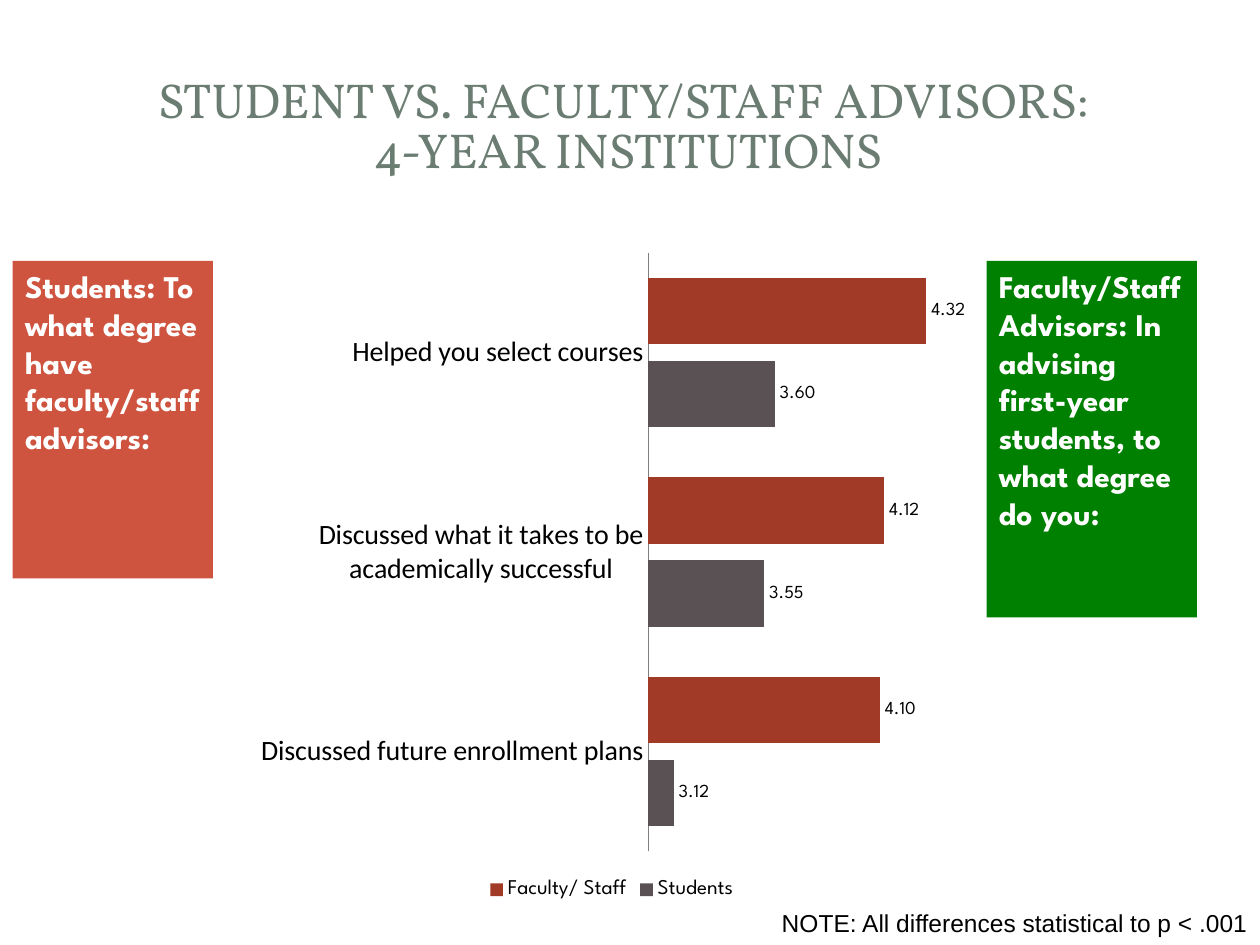
import pptx
import pptx.chart.data
import pptx.dml.color
import pptx.enum.chart
import pptx.enum.shapes
import pptx.enum.text
import pptx.oxml
import pptx.util
from dataclasses import dataclass
from pptx.util import Inches


@dataclass(frozen=True)
class Theme:
    title: str = "6B7D72"
    students_box: str = "CF543F"
    faculty_box: str = "008000"
    students_bar: str = "5A5155"
    faculty_bar: str = "A23A28"
    axis: str = "808080"
    white: str = "FFFFFF"
    black: str = "000000"
    heading_font: str = "Vollkorn"
    body_font: str = "League Spartan"
    category_font: str = "Calibri"
    note_font: str = "Arial"
    title_size: float = 28
    question_size: float = 18
    category_size: float = 16
    note_size: float = 14
    legend_size: float = 12
    label_size: float = 10.5


theme = Theme()
align = pptx.enum.text.PP_ALIGN


def set_font(font, name, size, color, bold=False):
    font.name = name
    font.size = pptx.util.Pt(size)
    font.bold = bold
    font.color.rgb = pptx.dml.color.RGBColor.from_string(color)


def write_lines(frame, lines, alignment, *style):
    frame.word_wrap = True
    for index, line in enumerate(lines):
        paragraph = frame.paragraphs[0] if index == 0 else frame.add_paragraph()
        paragraph.alignment = alignment
        run = paragraph.add_run()
        run.text = line
        set_font(run.font, *style)


presentation = pptx.Presentation()
presentation.slide_width = Inches(10)
presentation.slide_height = Inches(7.5)
slide = presentation.slides.add_slide(presentation.slide_layouts[6])

# Title
title = slide.shapes.add_textbox(Inches(0.47), Inches(0.45), Inches(9.03), Inches(1.14)).text_frame
title.vertical_anchor = pptx.enum.text.MSO_ANCHOR.MIDDLE
write_lines(title, ["STUDENT VS. FACULTY/STAFF ADVISORS: ", "4-YEAR INSTITUTIONS"],
            align.CENTER, theme.heading_font, theme.title_size, theme.title)
for line in title.paragraphs:
    line.line_spacing = 0.85

# Survey questions on either side of the chart
questions = [
    (0.1, 1.59, 2.52, theme.students_box,
     ["Students: To", "what degree have faculty/staff advisors:"]),
    (7.83, 1.67, 2.83, theme.faculty_box,
     ["Faculty/Staff Advisors: In advising first-year students, to what degree do you:"]),
]
for left, width, height, fill, lines in questions:
    question = slide.shapes.add_shape(pptx.enum.shapes.MSO_SHAPE.RECTANGLE, Inches(left),
                                      Inches(2.07), Inches(width), Inches(height))
    question.shadow.inherit = False
    question.fill.solid()
    question.fill.fore_color.rgb = pptx.dml.color.RGBColor.from_string(fill)
    question.line.fill.background()
    question.text_frame.vertical_anchor = pptx.enum.text.MSO_ANCHOR.TOP
    write_lines(question.text_frame, lines, align.LEFT,
                theme.body_font, theme.question_size, theme.white, True)

# Significance note
note = slide.shapes.add_textbox(Inches(4.89), Inches(7.16), Inches(5.11), Inches(0.34)).text_frame
write_lines(note, ["NOTE: All differences statistical to p < .001"], align.RIGHT,
            theme.note_font, theme.note_size, theme.black)

# Ratings chart
ratings = pptx.chart.data.CategoryChartData(number_format="0.00")
ratings.categories = ["Discussed future enrollment plans",
                      "Discussed what it takes to be academically successful",
                      "Helped you select courses"]
ratings.add_series("Students", [3.12, 3.55, 3.6])
ratings.add_series("Faculty/ Staff", [4.1, 4.12, 4.32])
chart = slide.shapes.add_chart(pptx.enum.chart.XL_CHART_TYPE.BAR_CLUSTERED, Inches(1.94),
                               Inches(1.9), Inches(5.83), Inches(5.28), ratings).chart
set_font(chart.font, theme.body_font, theme.label_size, theme.black)
chart.has_title = False

# Bars and value labels
plot = chart.plots[0]
plot.vary_by_categories = False
plot.gap_width = 75
plot.overlap = -25
for series, color in zip(plot.series, [theme.students_bar, theme.faculty_bar]):
    series.format.fill.solid()
    series.format.fill.fore_color.rgb = pptx.dml.color.RGBColor.from_string(color)
    labels = series.data_labels
    labels.show_value = True
    labels.number_format = "0.00"
    labels.number_format_is_linked = False
    labels.position = pptx.enum.chart.XL_LABEL_POSITION.OUTSIDE_END
    set_font(labels.font, theme.body_font, theme.label_size, theme.black)

# Axes
activities = chart.category_axis
activities.major_tick_mark = pptx.enum.chart.XL_TICK_MARK.NONE
activities.format.line.color.rgb = pptx.dml.color.RGBColor.from_string(theme.axis)
activities.format.line.width = pptx.util.Pt(0.75)
set_font(activities.tick_labels.font, theme.category_font, theme.category_size, theme.black)
scale = chart.value_axis
scale.minimum_scale = 3
scale.maximum_scale = 4.5
scale.has_major_gridlines = False
scale.visible = False

# Legend
chart.has_legend = True
chart.legend.position = pptx.enum.chart.XL_LEGEND_POSITION.BOTTOM
chart.legend.include_in_layout = False
set_font(chart.legend.font, theme.body_font, theme.legend_size, theme.black)

# Plot area, as fractions of the chart frame
plot_area = chart._chartSpace.chart.plotArea
for old_layout in plot_area.xpath("c:layout"):
    plot_area.remove(old_layout)
plot_area.insert(0, pptx.oxml.parse_xml(
    '<c:layout xmlns:c="http://schemas.openxmlformats.org/drawingml/2006/chart"><c:manualLayout>'
    '<c:layoutTarget val="inner"/><c:xMode val="edge"/><c:yMode val="edge"/>'
    '<c:x val="0.55"/><c:y val="0.02"/><c:w val="0.43"/><c:h val="0.9"/>'
    '</c:manualLayout></c:layout>'))

presentation.save("out.pptx")
